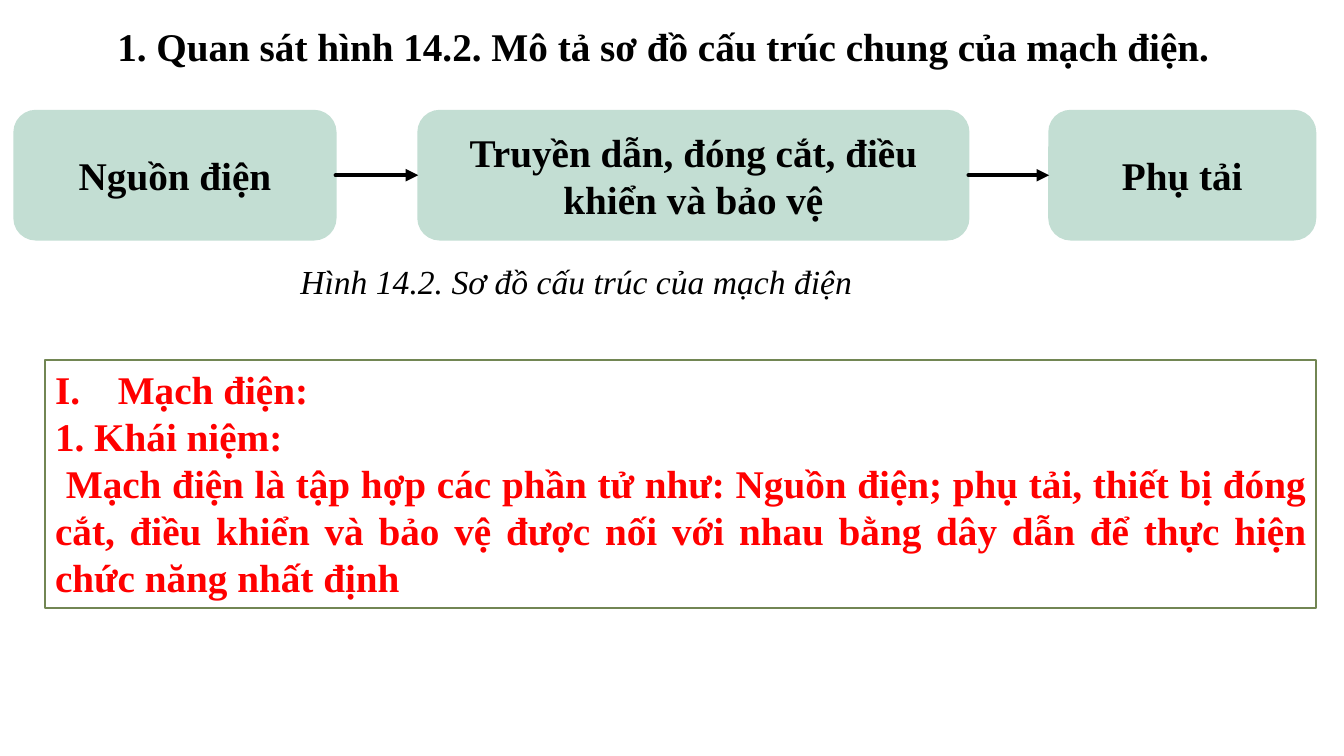
from lxml import etree
from pptx import Presentation
from pptx.dml.color import RGBColor
from pptx.enum import shapes, text
from pptx.oxml import ns
from pptx.util import Cm, Pt

COLORS = {"black": "000000", "red": "FF0000", "mint": "C3DED3",
          "white": "FFFFFF", "olive": "728653"}
FONT = "Times New Roman"
BOX_TOP, BOX_HEIGHT = 2.79, 3.25
STAGES = [  # left, width, label
    (0.36, 8.1, "Nguồn điện"),
    (10.54, 13.87, "Truyền dẫn, đóng cắt, điều khiển và bảo vệ"),
    (26.44, 6.71, "Phụ tải"),
]
NOTES = [
    "Mạch điện:",
    "1. Khái niệm:",
    " Mạch điện là tập hợp các phần tử như: Nguồn điện; phụ tải, thiết bị đóng "
    "cắt, điều khiển và bảo vệ được nối với nhau bằng dây dẫn để thực hiện "
    "chức năng nhất định",
]


def color(name):
    return RGBColor.from_string(COLORS[name])


def write(shape, lines, align, anchor, size=28, ink="black", bold=True, italic=False):
    """Fill the shape with one formatted paragraph per line."""
    frame = shape.text_frame
    frame.text = "\n".join(lines)
    frame.word_wrap = True
    frame.auto_size = text.MSO_AUTO_SIZE.NONE
    frame.vertical_anchor = anchor
    for paragraph in frame.paragraphs:
        paragraph.alignment = align
        font = paragraph.font
        font.name, font.size = FONT, Pt(size)
        font.bold, font.italic = bold, italic
        font.color.rgb = color(ink)


def add_box(slide, kind, left, top, width, height, fill, line):
    shape = slide.shapes.add_shape(kind, Cm(left), Cm(top), Cm(width), Cm(height))
    shape.shadow.inherit = False
    shape.fill.solid()
    shape.fill.fore_color.rgb = color(fill)
    shape.line.color.rgb = color(line)
    shape.line.width = Pt(1.25)
    return shape


def add_stage(slide, left, width, label):
    box = add_box(slide, shapes.MSO_SHAPE.ROUNDED_RECTANGLE,
                  left, BOX_TOP, width, BOX_HEIGHT, "mint", "mint")
    write(box, [label], text.PP_ALIGN.CENTER, text.MSO_ANCHOR.MIDDLE)
    return box


def add_arrow(slide, source, target):
    """Join the right side of source to the left side of target."""
    arrow = slide.shapes.add_connector(shapes.MSO_CONNECTOR.STRAIGHT, 0, 0, 0, 0)
    arrow.begin_connect(source, 3)
    arrow.end_connect(target, 1)
    arrow.line.color.rgb = color("black")
    arrow.line.width = Pt(3)
    line = arrow.line._get_or_add_ln()
    line.set("cap", "rnd")
    etree.SubElement(line, ns.qn("a:tailEnd"), type="triangle")
    etree.SubElement(arrow._element.spPr, ns.qn("a:effectLst"))


def number_roman(paragraph, indent):
    """Give the paragraph a hanging upper-case Roman number."""
    properties = paragraph._p.get_or_add_pPr()
    properties.set("marL", str(indent))
    properties.set("indent", str(-indent))
    bullet = etree.Element(ns.qn("a:buAutoNum"), type="romanUcPeriod")
    properties.insert(0, bullet)


def add_title(slide):
    title = slide.shapes.title
    title.left, title.top, title.width, title.height = Cm(0.81), Cm(0.43), Cm(31.8), Cm(1.45)
    write(title, ["1. Quan sát hình 14.2. Mô tả sơ đồ cấu trúc chung của mạch điện."],
          text.PP_ALIGN.CENTER, text.MSO_ANCHOR.TOP)


def add_caption(slide):
    caption = slide.shapes.add_textbox(Cm(7.32), Cm(6.45), Cm(14.91), Cm(1.27))
    write(caption, ["Hình 14.2. Sơ đồ cấu trúc của mạch điện"], text.PP_ALIGN.LEFT,
          text.MSO_ANCHOR.TOP, size=24, bold=False, italic=True)


def add_notes_box(slide):
    box = add_box(slide, shapes.MSO_SHAPE.RECTANGLE,
                  1.14, 9.07, 32.03, 6.25, "white", "olive")
    write(box, NOTES, text.PP_ALIGN.JUSTIFY, text.MSO_ANCHOR.TOP, ink="red")
    number_roman(box.text_frame.paragraphs[0], Cm(1.58))


def main():
    presentation = Presentation()
    presentation.slide_width, presentation.slide_height = Cm(33.87), Cm(19.05)
    slide = presentation.slides.add_slide(presentation.slide_layouts.get_by_name("Title Only"))
    add_title(slide)
    stages = [add_stage(slide, *stage) for stage in STAGES]
    for source, target in zip(stages, stages[1:]):
        add_arrow(slide, source, target)
    add_notes_box(slide)
    add_caption(slide)
    presentation.save("out.pptx")


if __name__ == "__main__":
    main()
